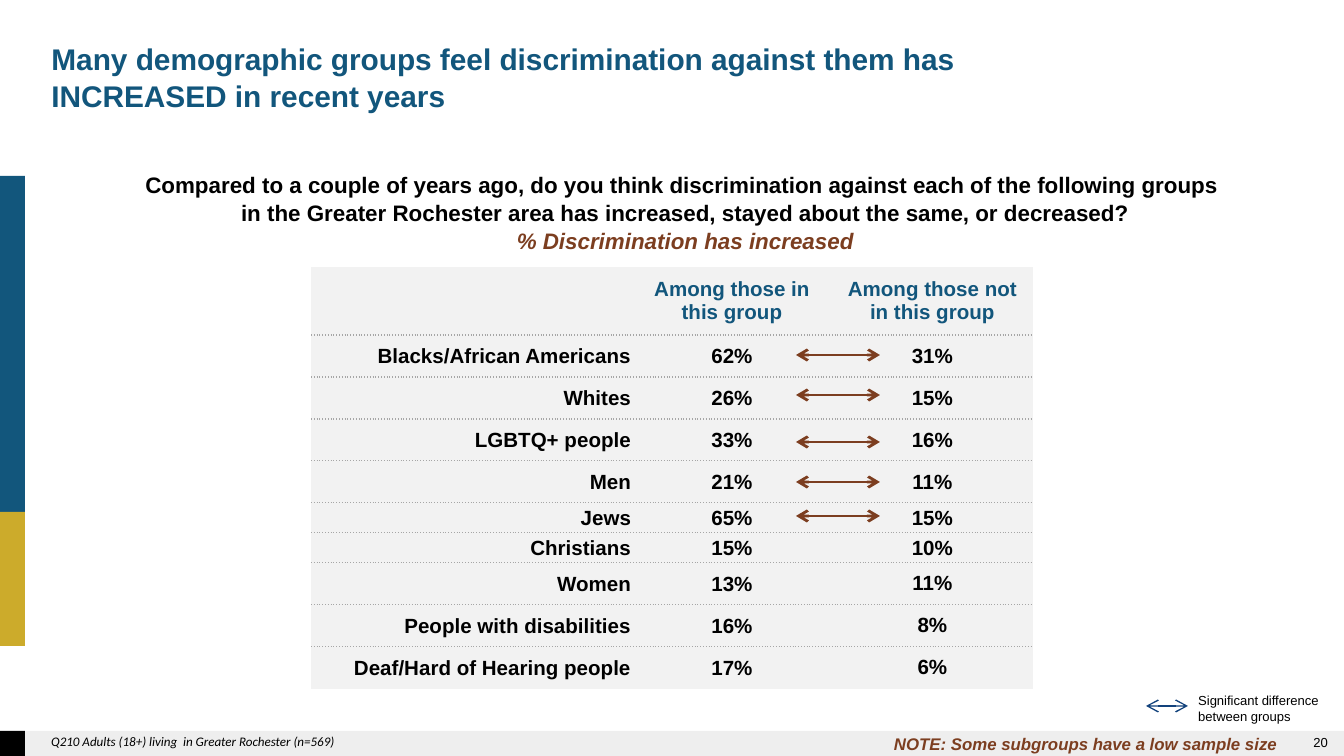
"""Build the slide on perceived increases in discrimination by group."""
from dataclasses import dataclass

from lxml import etree
from pptx import Presentation
from pptx import util as u
from pptx.dml.color import RGBColor
from pptx.enum import shapes, text
from pptx.oxml import ns

EMU_PER_PX = 914400 / 134.4
BLUE, GOLD, BROWN, BLACK = "12567C", "CCAB2B", "7C3E20", "000000"
NAVY, GREY, CELL, RULE = "12427C", "595959", "F2F2F2", "A6A6A6"
LEFT, CENTER, RIGHT = text.PP_ALIGN.LEFT, text.PP_ALIGN.CENTER, text.PP_ALIGN.RIGHT
TOP, MIDDLE = text.MSO_ANCHOR.TOP, text.MSO_ANCHOR.MIDDLE
NO_STYLE_ID = "{2D5ABB26-0587-4C30-8999-92F81FD0307C}"


@dataclass(frozen=True)
class Span:
    words: str
    size: int
    color: str = BLACK
    bold: bool = False
    italic: bool = False
    font: str = "Arial"


@dataclass(frozen=True)
class Area:
    left: int
    top: int
    width: int
    height: int


@dataclass(frozen=True)
class Bar:
    area: Area
    color: str
    opacity: int = 100


@dataclass(frozen=True)
class Note:
    area: Area
    spans: tuple[Span, ...]
    align: text.PP_ALIGN = LEFT
    anchor: text.MSO_ANCHOR = TOP
    spacing: float = 1.0


@dataclass(frozen=True)
class Arrow:
    left: int
    right: int
    y: int
    color: str
    weight: float


@dataclass(frozen=True)
class Group:
    label: str
    inside: str
    outside: str
    height: int = 42


BARS = (
    Bar(Area(0, 731, 1344, 25), GREY, 10),
    Bar(Area(0, 176, 25, 336), BLUE),
    Bar(Area(0, 512, 25, 134), GOLD),
    Bar(Area(0, 731, 25, 25), BLACK),
)
TITLE = Note(Area(38, 32, 1078, 79), (
    Span("Many demographic groups feel discrimination against them has INCREASED in recent years", 16, BLUE, True),
), spacing=1.05)
NOTES = (
    Note(Area(1028, 731, 313, 23), (Span("20", 7),), RIGHT, MIDDLE),
    Note(Area(27, 163, 1317, 95), (
        Span("Compared to a couple of years ago, do you think discrimination against each of the following groups ", 12, bold=True),
        Span("in the Greater Rochester area has increased, stayed about the same, or decreased?", 12, bold=True),
        Span("% Discrimination has increased", 12, BROWN, True, True),
    ), CENTER, spacing=1.05),
    Note(Area(38, 727, 884, 29), (
        Span("Q210 Adults (18+) living  in Greater Rochester (n=569)", 7, italic=True, font="Calibri"),
    )),
    Note(Area(1185, 685, 157, 46), (Span("Significant difference between groups", 7),), spacing=1.05),
    Note(Area(879, 727, 411, 34), (
        Span("NOTE: Some subgroups have a low sample size", 9, BROWN, True, True),
    ), RIGHT),
)
ARROWS = (
    Arrow(1146, 1188, 706, NAVY, 0.75),
    *(Arrow(796, 880, y, BROWN, 1.5) for y in (355, 395, 442, 482, 516)),
)
TABLE_LEFT, TABLE_TOP = 311, 267
COLUMNS = (321, 200, 201)
GROUPS = (
    Group("", "Among those in this group", "Among those not in this group", 68),
    Group("Blacks/African Americans", "62%", "31%"),
    Group("Whites", "26%", "15%"),
    Group("LGBTQ+ people", "33%", "16%"),
    Group("Men", "21%", "11%"),
    Group("Jews", "65%", "15%", 30),
    Group("Christians", "15%", "10%", 30),
    Group("Women", "13%", "11%"),
    Group("People with disabilities", "16%", "8%"),
    Group("Deaf/Hard of Hearing people", "17%", "6%"),
)


def px(length: int) -> u.Emu:
    """Convert pixels to EMU."""
    return u.Emu(round(length * EMU_PER_PX))


def rgb(value: str) -> RGBColor:
    """Turn a hex string into a colour."""
    return RGBColor.from_string(value)


def place(area: Area) -> tuple[u.Emu, ...]:
    """Convert an area to left, top, width and height in EMU."""
    return px(area.left), px(area.top), px(area.width), px(area.height)


def child(parent, tag: str, **attributes: str):
    """Append a DrawingML element."""
    return etree.SubElement(parent, ns.qn(f"a:{tag}"), attributes)


def write(para, span: Span, align: text.PP_ALIGN, spacing: float = 1.0) -> None:
    """Add one formatted run to a paragraph."""
    para.alignment, para.line_spacing = align, spacing
    run = para.add_run()
    run.text = span.words
    run.font.name, run.font.size = span.font, u.Pt(span.size)
    run.font.bold, run.font.italic = span.bold, span.italic
    run.font.color.rgb = rgb(span.color)


def fill_note(box, note: Note) -> None:
    """Place a text shape and write its paragraphs."""
    box.left, box.top, box.width, box.height = place(note.area)
    frame = box.text_frame
    frame.word_wrap, frame.auto_size = True, text.MSO_AUTO_SIZE.NONE
    frame.vertical_anchor = note.anchor
    for index, span in enumerate(note.spans):
        para = frame.add_paragraph() if index else frame.paragraphs[0]
        write(para, span, note.align, note.spacing)


def draw_bar(page, bar: Bar) -> None:
    """Draw a plain filled rectangle."""
    box = page.shapes.add_shape(shapes.MSO_SHAPE.RECTANGLE, *place(bar.area))
    box.shadow.inherit = False
    box.line.fill.background()
    box.fill.solid()
    box.fill.fore_color.rgb = rgb(bar.color)
    if bar.opacity < 100:
        color = box.fill._xPr.find(f".//{ns.qn('a:srgbClr')}")
        child(color, "alpha", val=str(bar.opacity * 1000))


def draw_arrow(page, arrow: Arrow) -> None:
    """Draw a horizontal line with a head at each end."""
    line = page.shapes.add_connector(
        shapes.MSO_CONNECTOR.STRAIGHT, px(arrow.left), px(arrow.y), px(arrow.right), px(arrow.y))
    line.line.color.rgb = rgb(arrow.color)
    line.line.width = u.Pt(arrow.weight)
    outline = line.line._get_or_add_ln()
    for end in ("headEnd", "tailEnd"):
        child(outline, end, type="arrow")
    child(line._element.spPr, "effectLst")


def rule_cell(cell, sides: list[str]) -> None:
    """Give a cell dotted rules on the named sides."""
    for side in sides:
        line = child(cell._tc.get_or_add_tcPr(), side, w=str(u.Pt(0.75)))
        child(child(line, "solidFill"), "srgbClr", val=RULE)
        child(line, "prstDash", val="sysDot")


def draw_table(page) -> None:
    """Draw the table of groups."""
    area = Area(TABLE_LEFT, TABLE_TOP, sum(COLUMNS), sum(group.height for group in GROUPS))
    frame = page.shapes.add_table(len(GROUPS), len(COLUMNS), *place(area))
    table = frame.table
    table.first_row = table.horz_banding = False
    table._tbl.tblPr.find(ns.qn("a:tableStyleId")).text = NO_STYLE_ID
    for column, width in zip(table.columns, COLUMNS):
        column.width = px(width)
    for row, group in enumerate(GROUPS):
        table.rows[row].height = px(group.height)
        sides = ["lnT"] * (row > 0) + ["lnB"] * (row < len(GROUPS) - 1)
        for column, words in enumerate((group.label, group.inside, group.outside)):
            cell = table.cell(row, column)
            rule_cell(cell, sides)
            cell.fill.solid()
            cell.fill.fore_color.rgb = rgb(CELL)
            cell.vertical_anchor = MIDDLE
            if row and (column < 2 or group.height == 30):
                cell.margin_left = cell.margin_right = cell.margin_top = px(1)
                cell.margin_bottom = 0
            if words:
                span = Span(words, 11, BLACK if row else BLUE, True)
                write(cell.text_frame.paragraphs[0], span, CENTER if column else RIGHT)


def main() -> None:
    """Build and save the deck."""
    deck = Presentation()
    deck.slide_width, deck.slide_height = px(1344), px(756)
    page = deck.slides.add_slide(deck.slide_layouts[5])
    for bar in BARS:
        draw_bar(page, bar)
    fill_note(page.shapes.title, TITLE)
    draw_table(page)
    for note in NOTES:
        fill_note(page.shapes.add_textbox(*place(note.area)), note)
    for arrow in ARROWS:
        draw_arrow(page, arrow)
    deck.save("out.pptx")


if __name__ == "__main__":
    main()
